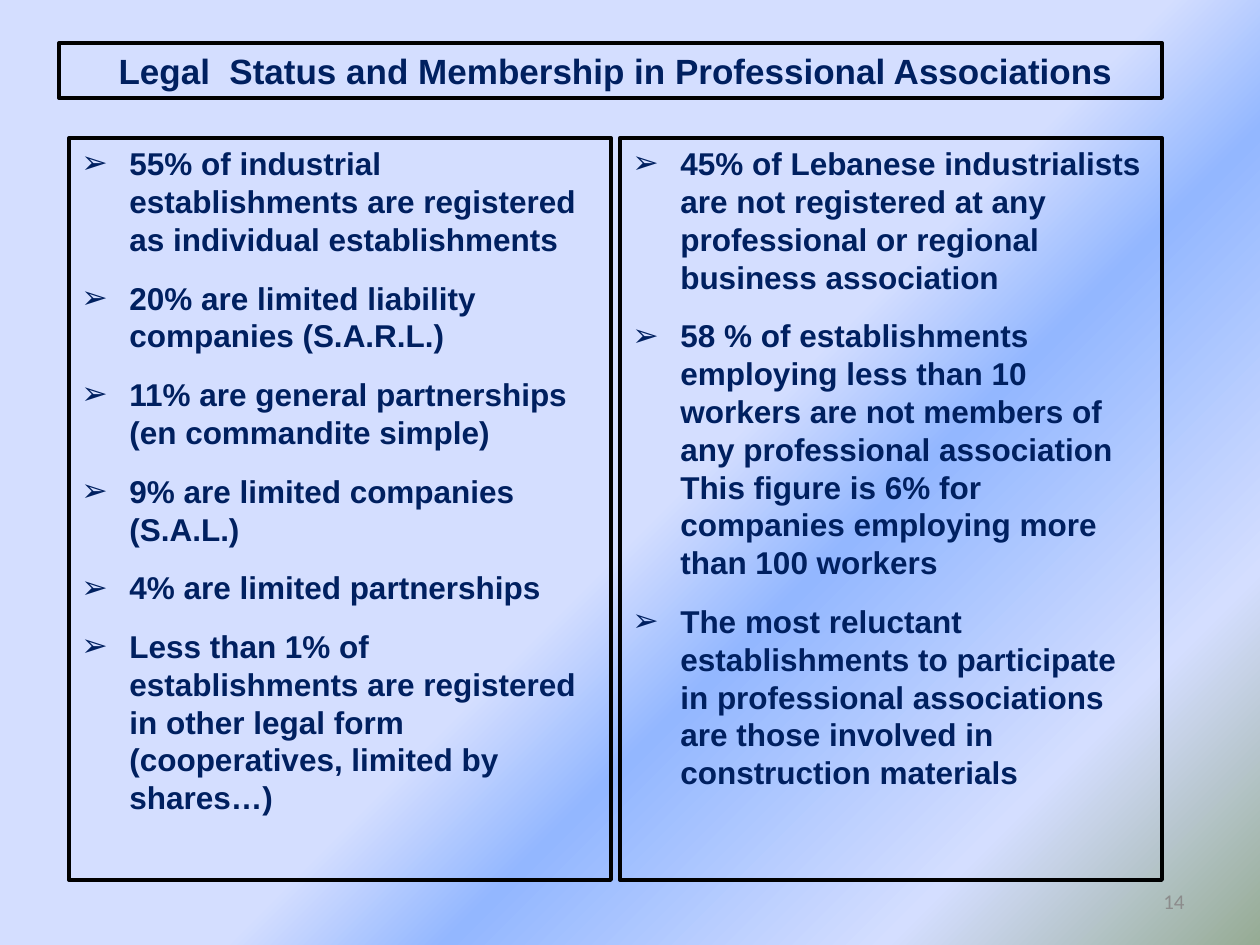
from lxml.etree import SubElement
from pptx import Presentation
from pptx.dml.color import RGBColor
from pptx.enum.shapes import MSO_SHAPE
from pptx.enum.text import MSO_ANCHOR, MSO_AUTO_SIZE, PP_ALIGN
from pptx.oxml.ns import qn
from pptx.util import Emu, Pt

PX = 914400 / 126
COLORS = {"text": "002060", "border": "000000", "number": "8C8C8C",
          "pale": "D4DEFF", "blue": "93B7FF", "green": "96AB94"}
BACKGROUND = [(53, "pale"), (63, "blue"), (83, "pale"), (100, "green")]
BODY = {"name": "Arial", "size": Pt(18), "bold": True}
HEADING = {**BODY, "size": Pt(20)}
NUMBER = {"name": "Calibri", "size": Pt(12), "bold": False}

LEGAL_STATUS = [
    "55% of industrial establishments are registered as individual establishments",
    "20% are limited liability companies (S.A.R.L.)",
    "11% are general partnerships (en commandite simple)",
    "9% are limited companies (S.A.L.)",
    "4% are limited partnerships",
    "Less than 1% of establishments are registered in other legal form "
    "(cooperatives, limited by shares…)",
]
MEMBERSHIP = [
    "45% of Lebanese industrialists are not registered at any professional "
    "or regional business association",
    "58 % of establishments employing less than 10 workers are not members of "
    "any professional association This figure is 6% for companies employing "
    "more than 100 workers",
    "The most reluctant establishments to participate in professional "
    "associations are those involved in construction materials",
]


def px(n):
    return Emu(round(n * PX))


def rgb(key):
    return RGBColor.from_string(COLORS[key])


def set_attrs(obj, values):
    for name, value in values.items():
        setattr(obj, name, value)


def add_text(p, text, font, color="text", align=PP_ALIGN.LEFT):
    p.alignment = align
    r = p.add_run()
    r.text = text
    set_attrs(r.font, font)
    r.font.color.rgb = rgb(color)


def set_indent(p, left, first):
    pPr = p._p.get_or_add_pPr()
    pPr.set("marL", str(px(left)))
    pPr.set("indent", str(px(first)))
    return pPr


def frame(sp):
    """Outline a box and start its text at the top."""
    sp.fill.background()
    sp.line.color.rgb = rgb("border")
    sp.line.width = Pt(2.25)
    set_attrs(sp.text_frame, {"word_wrap": True, "auto_size": MSO_AUTO_SIZE.NONE,
                              "vertical_anchor": MSO_ANCHOR.TOP})


def paint_background(s):
    fill = s.background.fill
    fill.gradient()
    grad = s.background._cSld.bg.bgPr.find(qn("a:gradFill"))
    stops = grad.find(qn("a:gsLst"))
    for stop in list(stops):
        stops.remove(stop)
    for pos, key in BACKGROUND:
        stop = SubElement(stops, qn("a:gs"), pos=str(pos * 1000))
        SubElement(stop, qn("a:srgbClr"), val=COLORS[key])
    lin = grad.find(qn("a:lin"))
    lin.set("ang", str(45 * 60000))
    lin.set("scaled", "0")


def add_title(s, x, y, w, h, text):
    sp = s.shapes.title
    set_attrs(sp, {"left": px(x), "top": px(y), "width": px(w), "height": px(h)})
    frame(sp)
    p = sp.text_frame.paragraphs[0]
    set_indent(p, 96, -49)
    add_text(p, text, HEADING)


def add_bullet_panel(s, x, y, w, h, items, spacing):
    sp = s.shapes.add_shape(MSO_SHAPE.RECTANGLE, px(x), px(y), px(w), px(h))
    sp.shadow.inherit = False
    frame(sp)
    tf = sp.text_frame
    for i, item in enumerate(items):
        p = tf.add_paragraph() if i else tf.paragraphs[0]
        set_attrs(p, spacing)
        pPr = set_indent(p, 48, -48)
        SubElement(pPr, qn("a:buFont"), typeface="Arial")
        SubElement(pPr, qn("a:buChar"), char="➢")
        add_text(p, item, BODY)


def add_page_number(s, x, y, w, h, number):
    tf = s.shapes.add_textbox(px(x), px(y), px(w), px(h)).text_frame
    set_attrs(tf, {"word_wrap": True, "vertical_anchor": MSO_ANCHOR.MIDDLE})
    add_text(tf.paragraphs[0], number, NUMBER, "number", PP_ALIGN.RIGHT)


def main():
    prs = Presentation()
    prs.slide_width, prs.slide_height = px(1260), px(945)
    s = prs.slides.add_slide(prs.slide_layouts[5])
    paint_background(s)

    add_page_number(s, 903, 876, 294, 50, "14")
    add_title(s, 59, 43, 1103, 55,
              "Legal  Status and Membership in Professional Associations")

    # Two equal panels side by side
    left, top, width, height, gap = 69, 138, 542, 742, 9
    panels = [(LEGAL_STATUS, {"space_before": Pt(12)}),
              (MEMBERSHIP, {"space_after": Pt(12)})]
    for i, (items, spacing) in enumerate(panels):
        add_bullet_panel(s, left + i * (width + gap), top, width, height,
                         items, spacing)

    prs.save("out.pptx")


if __name__ == "__main__":
    main()
